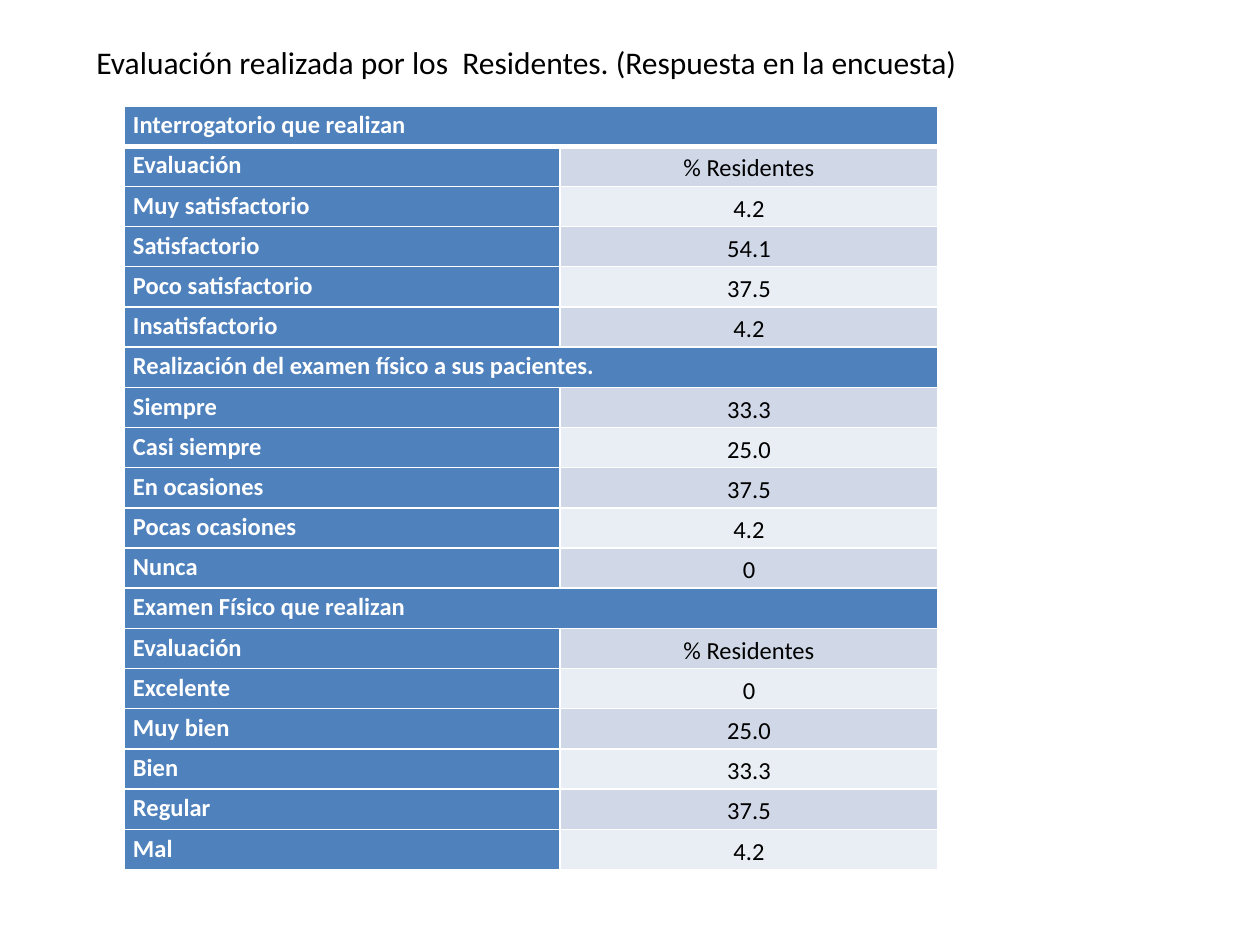
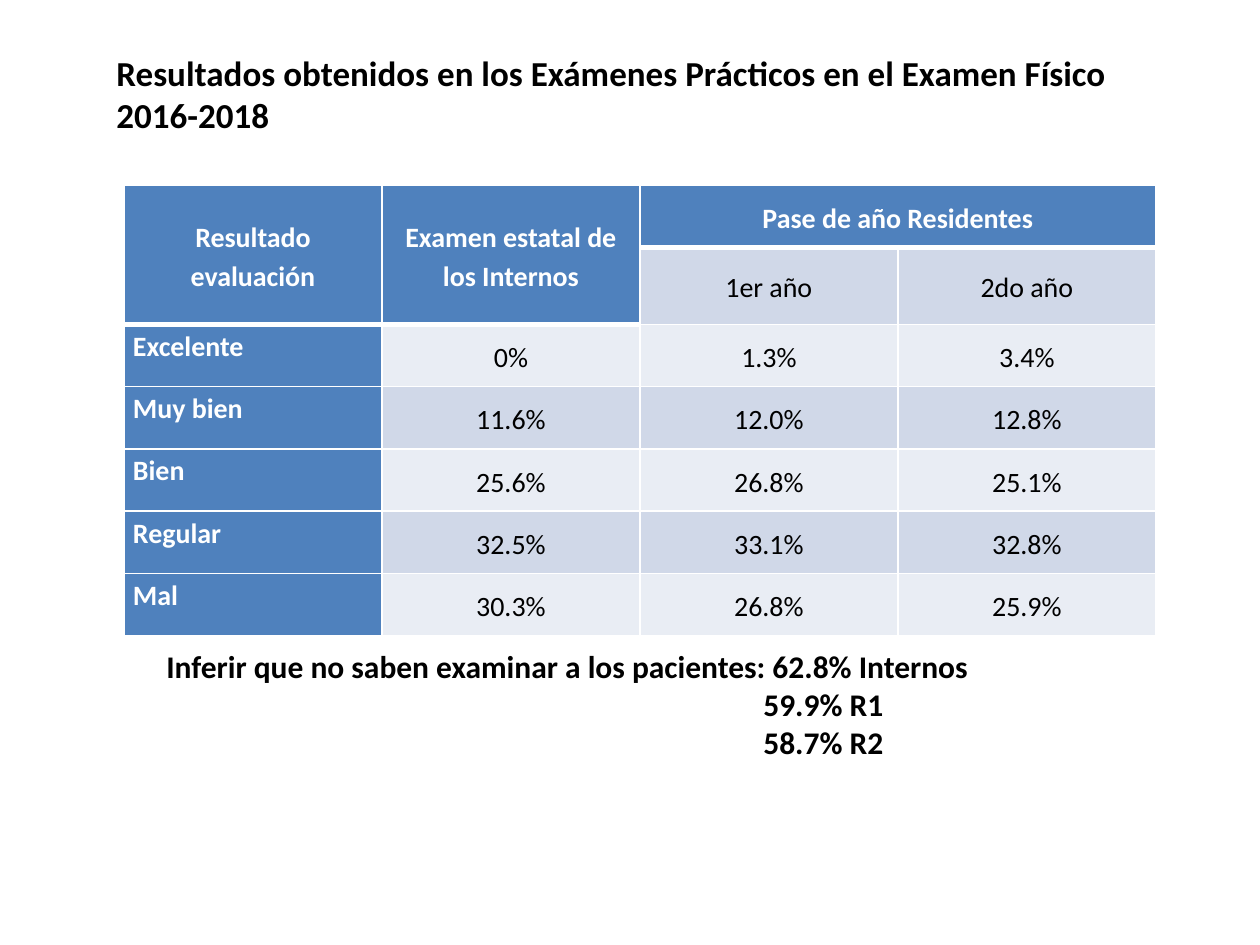
"""Two slides of survey and exam results shown as banded tables."""
from lxml import etree
from pptx import Presentation
from pptx.dml.color import RGBColor
from pptx.enum.text import MSO_ANCHOR, PP_ALIGN
from pptx.oxml.ns import qn
from pptx.util import Pt

PX = 914400 // 126
FONT = "Calibri"
BLACK = RGBColor(0x00, 0x00, 0x00)
WHITE = RGBColor(0xFF, 0xFF, 0xFF)
BLUE = RGBColor(0x4F, 0x81, 0xBD)
BANDS = (RGBColor(0xE9, 0xED, 0xF4), RGBColor(0xD0, 0xD8, 0xE8))
LEFT, CENTER = PP_ALIGN.LEFT, PP_ALIGN.CENTER
TOP, MIDDLE = MSO_ANCHOR.TOP, MSO_ANCHOR.MIDDLE

SURVEY_TITLE = ["Evaluación realizada por los  Residentes. (Respuesta en la encuesta)"]
SURVEY_ROWS = [
    ("Interrogatorio que realizan",),
    ("Evaluación", "% Residentes"),
    ("Muy satisfactorio", "4.2"),
    ("Satisfactorio", "54.1"),
    ("Poco satisfactorio", "37.5"),
    ("Insatisfactorio", "4.2"),
    ("Realización del examen físico a sus pacientes.",),
    ("Siempre", "33.3"),
    ("Casi siempre", "25.0"),
    ("En ocasiones", "37.5"),
    ("Pocas ocasiones", "4.2"),
    ("Nunca", "0"),
    ("Examen Físico que realizan",),
    ("Evaluación", "% Residentes"),
    ("Excelente", "0"),
    ("Muy bien", "25.0"),
    ("Bien", "33.3"),
    ("Regular", "37.5"),
    ("Mal", "4.2"),
]
SURVEY_MERGES = [((i, 0), (i, 1)) for i, row in enumerate(SURVEY_ROWS) if len(row) == 1]

EXAM_TITLE = [
    "Resultados obtenidos en los Exámenes Prácticos en el Examen Físico",
    "2016-2018",
]
EXAM_ROWS = [
    ("Resultado evaluación", "Examen estatal de los Internos", "Pase de año Residentes"),
    ("", "", "1er año", "2do año"),
    ("Excelente", "0%", "1.3%", "3.4%"),
    ("Muy bien", "11.6%", "12.0%", "12.8%"),
    ("Bien", "25.6%", "26.8%", "25.1%"),
    ("Regular", "32.5%", "33.1%", "32.8%"),
    ("Mal", "30.3%", "26.8%", "25.9%"),
]
EXAM_MERGES = [((0, 0), (1, 0)), ((0, 1), (1, 1)), ((0, 2), (0, 3))]
CONCLUSION = [
    "Inferir que no saben examinar a los pacientes: 62.8% Internos",
    "59.9% R1",
    "58.7% R2",
]


def style(p, size, color, bold):
    for r in p.runs:
        r.font.name, r.font.size, r.font.bold = FONT, Pt(size), bold
        r.font.color.rgb = color


def add_text(slide, box, lines, size, bold, indent=0):
    tf = slide.shapes.add_textbox(*(v * PX for v in box)).text_frame
    tf.word_wrap = True
    tf.text = "\n".join(lines)
    for i, p in enumerate(tf.paragraphs):
        style(p, size, BLACK, bold)
        if i and indent:
            p._p.get_or_add_pPr().set("marL", str(indent * PX))


def set_borders(cell, top, bottom):
    tcPr = cell._tc.get_or_add_tcPr()
    for side, width in (("L", 1), ("R", 1), ("T", top), ("B", bottom)):
        ln = etree.SubElement(tcPr, qn(f"a:ln{side}"), w=str(Pt(width)))
        fill = etree.SubElement(ln, qn("a:solidFill"))
        etree.SubElement(fill, qn("a:srgbClr"), val=str(WHITE))


def add_table(slide, box, rows, widths, merges, header_rows, size, header_align, header_anchor):
    """Build a table; header_rows gives the header depth of each column."""
    table = slide.shapes.add_table(len(rows), len(widths), *(v * PX for v in box)).table
    for col, width in zip(table.columns, widths):
        col.width = width * PX
    for (r1, c1), (r2, c2) in merges:
        table.cell(r1, c1).merge(table.cell(r2, c2))
    for i, row in enumerate(rows):
        for j, depth in enumerate(header_rows):
            cell = table.cell(i, j)
            header = i < depth
            label = header or j == 0
            set_borders(cell, 3 if i == depth else 1, 3 if header else 1)
            cell.fill.solid()
            cell.fill.fore_color.rgb = BLUE if label else BANDS[i % 2]
            cell.margin_left = cell.margin_right = 9 * PX
            cell.margin_top = cell.margin_bottom = 0
            if cell.is_spanned:
                continue
            align, anchor = (LEFT, TOP) if label else (CENTER, MIDDLE)
            if header:
                align, anchor = header_align, header_anchor
            cell.vertical_anchor = anchor
            p = cell.text_frame.paragraphs[0]
            p.text = row[j]
            p.alignment, p.line_spacing = align, 1.15
            style(p, size, WHITE if label else BLACK, label)


def main():
    prs = Presentation()
    prs.slide_width, prs.slide_height = 1260 * PX, 945 * PX
    blank = prs.slide_layouts[6]

    s = prs.slides.add_slide(blank)
    add_text(s, (84, 37, 983, 50), SURVEY_TITLE, 18, False)
    add_table(s, (124, 106, 814, 764), SURVEY_ROWS, (436, 378), SURVEY_MERGES,
              (1, 1), 14, LEFT, TOP)

    s = prs.slides.add_slide(blank)
    add_text(s, (104, 45, 1081, 97), EXAM_TITLE, 20, True)
    add_table(s, (124, 185, 1032, 436), EXAM_ROWS, (258,) * 4, EXAM_MERGES,
              (2, 2, 1, 1), 16, CENTER, MIDDLE)
    add_text(s, (154, 641, 963, 165), CONCLUSION, 18, True, indent=597)

    prs.save("out.pptx")


if __name__ == "__main__":
    main()
